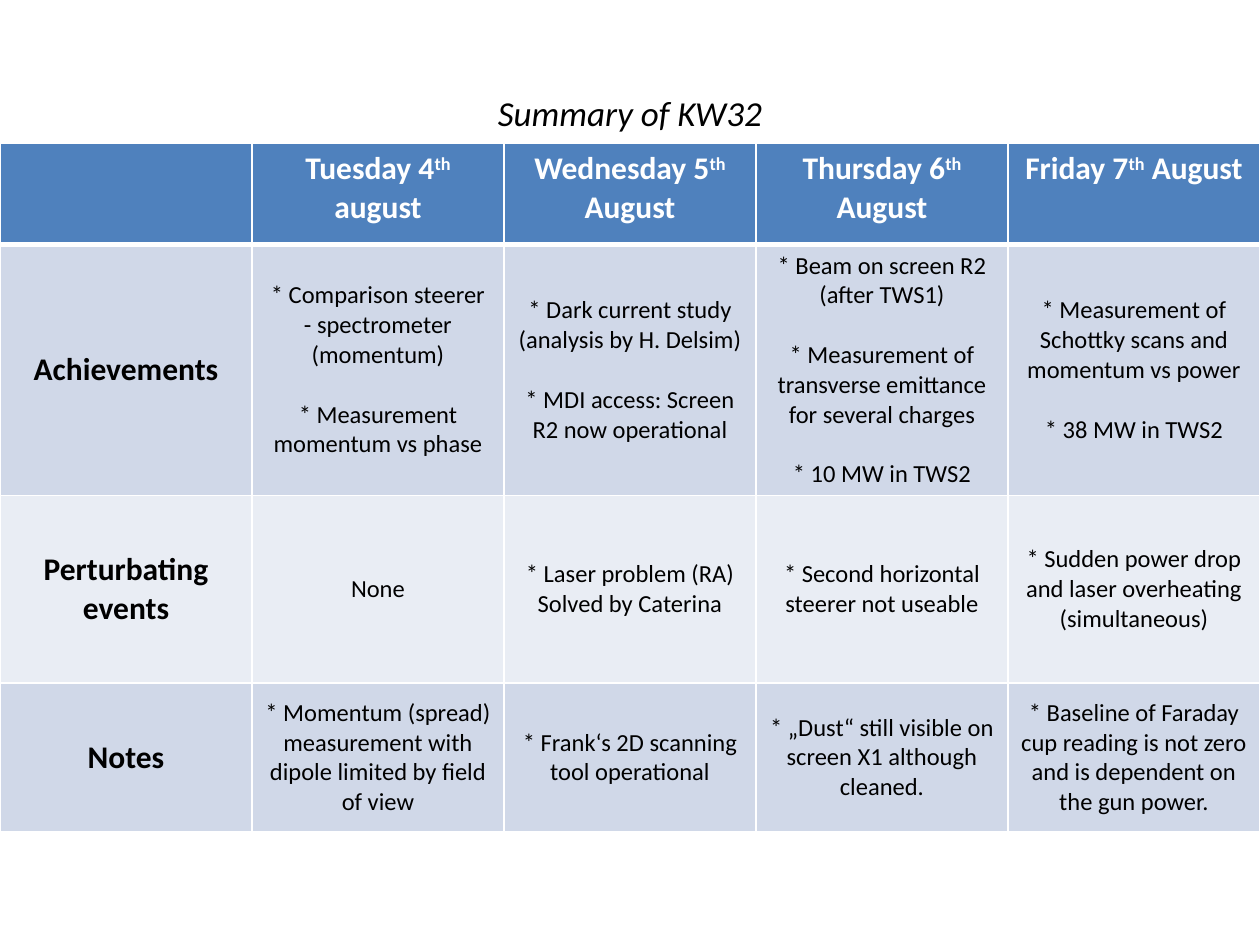
"""Build the weekly summary slide for KW32."""
from lxml.etree import SubElement
from pptx import Presentation
from pptx.dml.color import RGBColor
from pptx.enum.text import MSO_ANCHOR as Anchor, PP_ALIGN as Align
from pptx.oxml.ns import qn
from pptx.util import Inches, Pt

COLORS = {"header": "4F81BD", "odd": "D0D8E8", "even": "E9EDF4",
          "white": "FFFFFF", "black": "000000"}
ROW_HEIGHTS = [0.8, 1.96, 1.49, 1.18]
ROW_FILLS = ["header", "odd", "even", "odd"]

# Each cell is a list of paragraphs; text between carets is superscript.
CELLS = [
    [[], ["Tuesday 4^th ^august"], ["Wednesday 5^th^ August"],
     ["Thursday 6^th^ August"], ["Friday 7^th^ August"]],
    [["Achievements"],
     ["* Comparison steerer - spectrometer (momentum)",
      "* Measurement momentum vs phase"],
     ["* Dark current study (analysis by H. Delsim)",
      "* MDI access: Screen R2 now operational"],
     ["* Beam on screen R2 (after TWS1)",
      "* Measurement of transverse emittance for several charges",
      "* 10 MW in TWS2"],
     ["* Measurement of Schottky scans and momentum vs power",
      "* 38 MW in TWS2"]],
    [["Perturbating events"], ["None"],
     ["* Laser problem (RA) Solved by Caterina"],
     ["* Second horizontal steerer not useable"],
     ["* Sudden power drop and laser overheating (simultaneous)"]],
    [["Notes"],
     ["* Momentum (spread) measurement with dipole limited by field of view"],
     ["* Frank‘s 2D scanning tool operational"],
     ["* „Dust“ still visible on screen X1 although cleaned."],
     ["* Baseline of Faraday cup reading is not zero and is dependent on "
      "the gun power."]],
]


def write(frame, paragraphs, size=14, bold=False, italic=False, color="black"):
    for index, text in enumerate(paragraphs):
        paragraph = frame.paragraphs[0] if index == 0 else frame.add_paragraph()
        paragraph.alignment = Align.CENTER
        paragraph.space_before = Pt(17 if index else 0)
        for position, part in enumerate(text.split("^")):
            run = paragraph.add_run()
            run.text = part
            font = run.font
            font.name, font.size = "Calibri", Pt(size)
            font.bold, font.italic = bold, italic
            font.color.rgb = RGBColor.from_string(COLORS[color])
            if position % 2:
                run._r.get_or_add_rPr().set("baseline", "30000")


def add_border(cell, side, width):
    line = SubElement(cell._tc.get_or_add_tcPr(), qn(f"a:ln{side}"), w=str(Pt(width)))
    fill = SubElement(line, qn("a:solidFill"))
    SubElement(fill, qn("a:srgbClr"), val=COLORS["white"])


presentation = Presentation()
presentation.slide_width, presentation.slide_height = Inches(10), Inches(7.5)
slide = presentation.slides.add_slide(presentation.slide_layouts[5])
slide_width = presentation.slide_width

title = slide.shapes.title
title.left, title.top = 0, Inches(0.68)
title.width, title.height = slide_width, Inches(0.44)
title.text_frame.word_wrap = True
title.text_frame.vertical_anchor = Anchor.TOP
write(title.text_frame, ["Summary of KW32"], size=20, italic=True)

row_count, column_count = len(CELLS), len(CELLS[0])
table = slide.shapes.add_table(row_count, column_count, 0, Inches(1.14), slide_width,
                               Inches(sum(ROW_HEIGHTS))).table
for column in table.columns:
    column.width = slide_width // column_count

for row_index, row_cells in enumerate(CELLS):
    table.rows[row_index].height = Inches(ROW_HEIGHTS[row_index])
    is_header = row_index == 0
    for column_index, paragraphs in enumerate(row_cells):
        cell = table.cell(row_index, column_index)
        is_heading = is_header or column_index == 0
        cell.vertical_anchor = Anchor.TOP if is_header else Anchor.MIDDLE
        for side in "LRTB":
            is_thick = (row_index, side) in [(0, "B"), (1, "T")]
            add_border(cell, side, 3 if is_thick else 1)
        cell.fill.solid()
        cell.fill.fore_color.rgb = RGBColor.from_string(COLORS[ROW_FILLS[row_index]])
        write(cell.text_frame, paragraphs, size=18 if is_heading else 14,
              bold=is_heading, color="white" if is_header else "black")

presentation.save("out.pptx")
